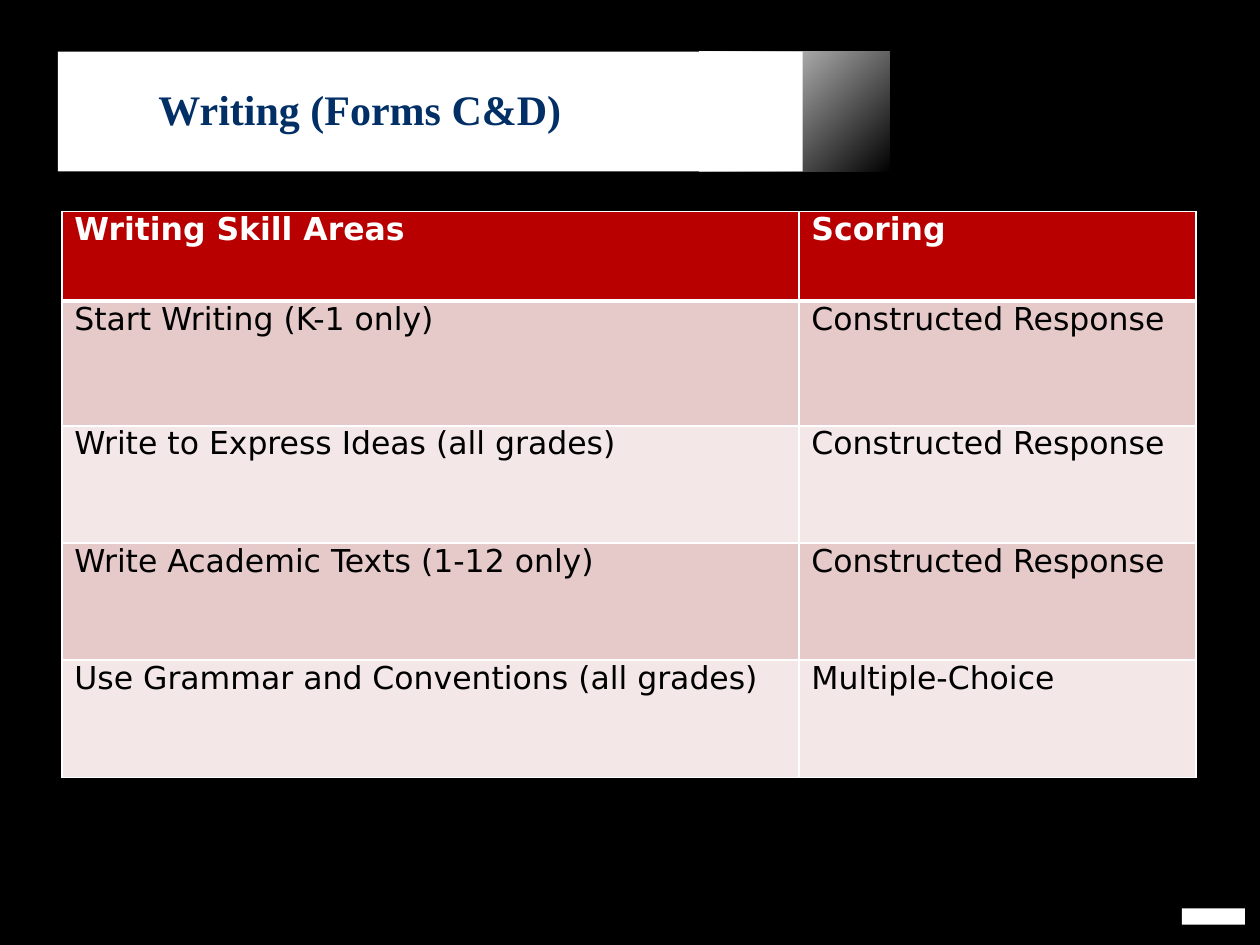
from lxml.etree import SubElement
from pptx import Presentation
from pptx.dml.color import RGBColor
from pptx.enum.shapes import MSO_SHAPE as Preset
from pptx.enum.text import MSO_ANCHOR as Anchor
from pptx.oxml.ns import qn
from pptx.util import Inches, Pt

BLACK, WHITE, NAVY, RED = "000000", "FFFFFF", "022F65", "B80000"
BANDS = ["E6CACA", "F3E7E7"]
COLUMN_WIDTHS = [5.85, 3.15]
ROW_HEIGHTS = [0.71, 0.99, 0.93, 0.93, 0.93]
SKILLS = [
    ("Writing Skill Areas", "Scoring"),
    ("Start Writing (K-1 only)", "Constructed Response"),
    ("Write to Express Ideas (all grades)", "Constructed Response"),
    ("Write Academic Texts (1-12 only)", "Constructed Response"),
    ("Use Grammar and Conventions (all grades)", "Multiple-Choice"),
]


def rgb(value):
    """Turn a hex string into a colour."""
    return RGBColor.from_string(value)


def add_run(paragraph, text, font, size, color, bold):
    """Add one formatted run to a paragraph."""
    run = paragraph.add_run()
    run.text = text
    run.font.name, run.font.size, run.font.bold = font, Pt(size), bold
    run.font.color.rgb = rgb(color)


def add_panel(slide, left, top, width, height):
    """Add a plain white rectangle without an outline."""
    panel = slide.shapes.add_shape(
        Preset.RECTANGLE, Inches(left), Inches(top), Inches(width), Inches(height))
    panel.shadow.inherit = False
    panel.fill.solid()
    panel.fill.fore_color.rgb = rgb(WHITE)
    panel.line.fill.background()
    return panel


def fade_out(panel):
    """Fade a panel diagonally from white to transparent."""
    panel.fill.gradient()
    panel.fill.gradient_angle = 315
    for stop, position in zip(panel.fill.gradient_stops, (0, 1)):
        stop.color.rgb = rgb(WHITE)
        stop.position = position
    last_color = panel._element.spPr.findall(".//" + qn("a:srgbClr"))[-1]
    SubElement(last_color, qn("a:alpha"), val="0")


def add_title(slide, text):
    """Add the slide heading."""
    title = slide.shapes.add_textbox(
        Inches(1.16), Inches(0.53), Inches(7.03), Inches(0.66))
    frame = title.text_frame
    frame.word_wrap = True
    frame.vertical_anchor = Anchor.MIDDLE
    add_run(frame.paragraphs[0], text, "Times New Roman", 24, NAVY, True)


def add_borders(cell, top, bottom):
    """Draw white cell borders, with the top and bottom widths in points."""
    properties = cell._tc.get_or_add_tcPr()
    for side, width in (("L", 1), ("R", 1), ("T", top), ("B", bottom)):
        line = SubElement(properties, qn("a:ln" + side), w=str(Pt(width)))
        fill = SubElement(line, qn("a:solidFill"))
        SubElement(fill, qn("a:srgbClr"), val=WHITE)


def fill_cell(cell, text, row):
    """Style and fill one cell according to its row."""
    is_header = row == 0
    add_borders(cell, 3 if row == 1 else 1, 3 if is_header else 1)
    cell.fill.solid()
    cell.fill.fore_color.rgb = rgb(RED if is_header else BANDS[(row - 1) % 2])
    cell.margin_left = Inches(0.1)
    cell.margin_right = cell.margin_top = cell.margin_bottom = 0
    add_run(cell.text_frame.paragraphs[0], text, "DejaVu Sans", 18,
            WHITE if is_header else BLACK, is_header)


def add_skill_table(slide):
    """Add the table of skill areas and how each is scored."""
    table = slide.shapes.add_table(
        len(ROW_HEIGHTS), len(COLUMN_WIDTHS), Inches(0.49), Inches(1.68),
        Inches(sum(COLUMN_WIDTHS)), Inches(sum(ROW_HEIGHTS))).table
    for column, width in zip(table.columns, COLUMN_WIDTHS):
        column.width = Inches(width)
    for row, (height, texts) in enumerate(zip(ROW_HEIGHTS, SKILLS)):
        table.rows[row].height = Inches(height)
        for column, text in enumerate(texts):
            fill_cell(table.cell(row, column), text, row)


def main():
    """Build and save the slide."""
    deck = Presentation()
    deck.slide_width, deck.slide_height = Inches(10), Inches(7.5)
    slide = deck.slides.add_slide(deck.slide_layouts[6])
    slide.background.fill.solid()
    slide.background.fill.fore_color.rgb = rgb(BLACK)
    fade_out(add_panel(slide, 5.55, 0.41, 1.51, 0.95))
    add_panel(slide, 0.46, 0.41, 5.91, 0.95)
    add_panel(slide, 9.38, 7.21, 0.5, 0.13)
    add_title(slide, "Writing (Forms C&D)")
    add_skill_table(slide)
    deck.save("out.pptx")


if __name__ == "__main__":
    main()
